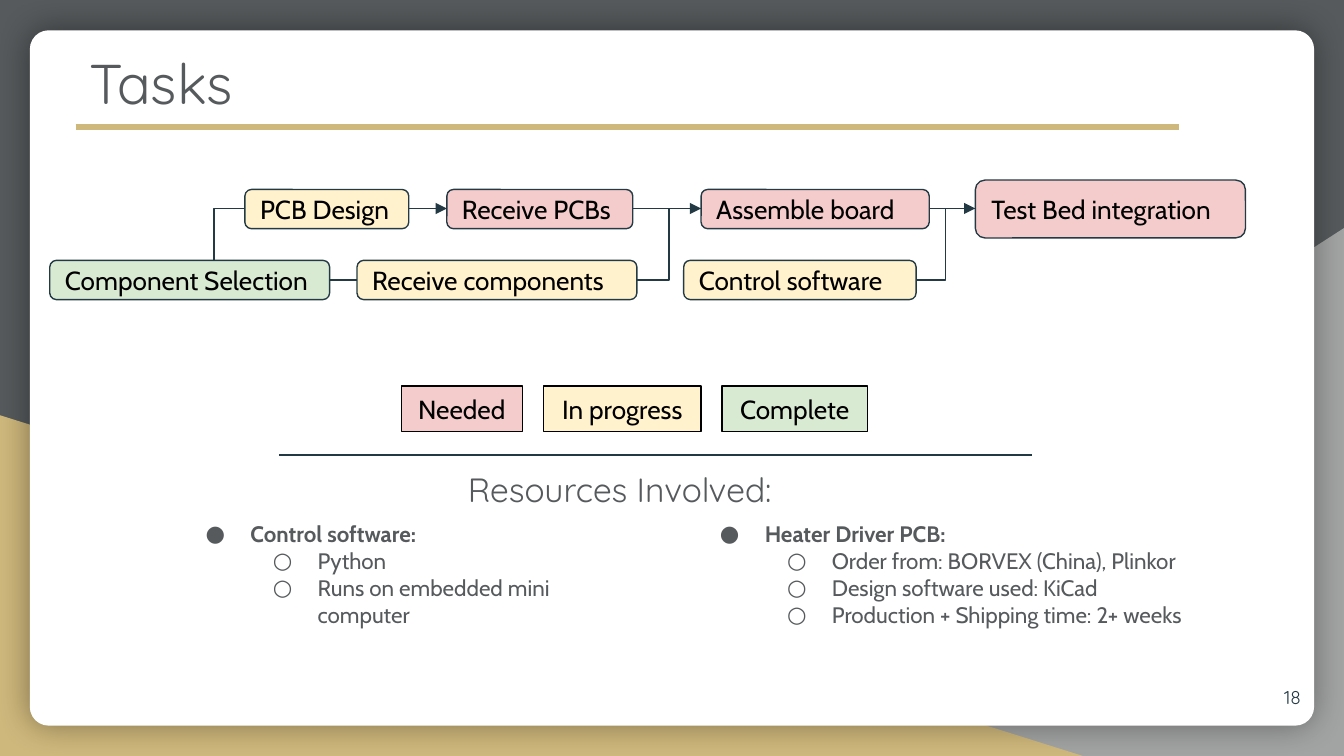
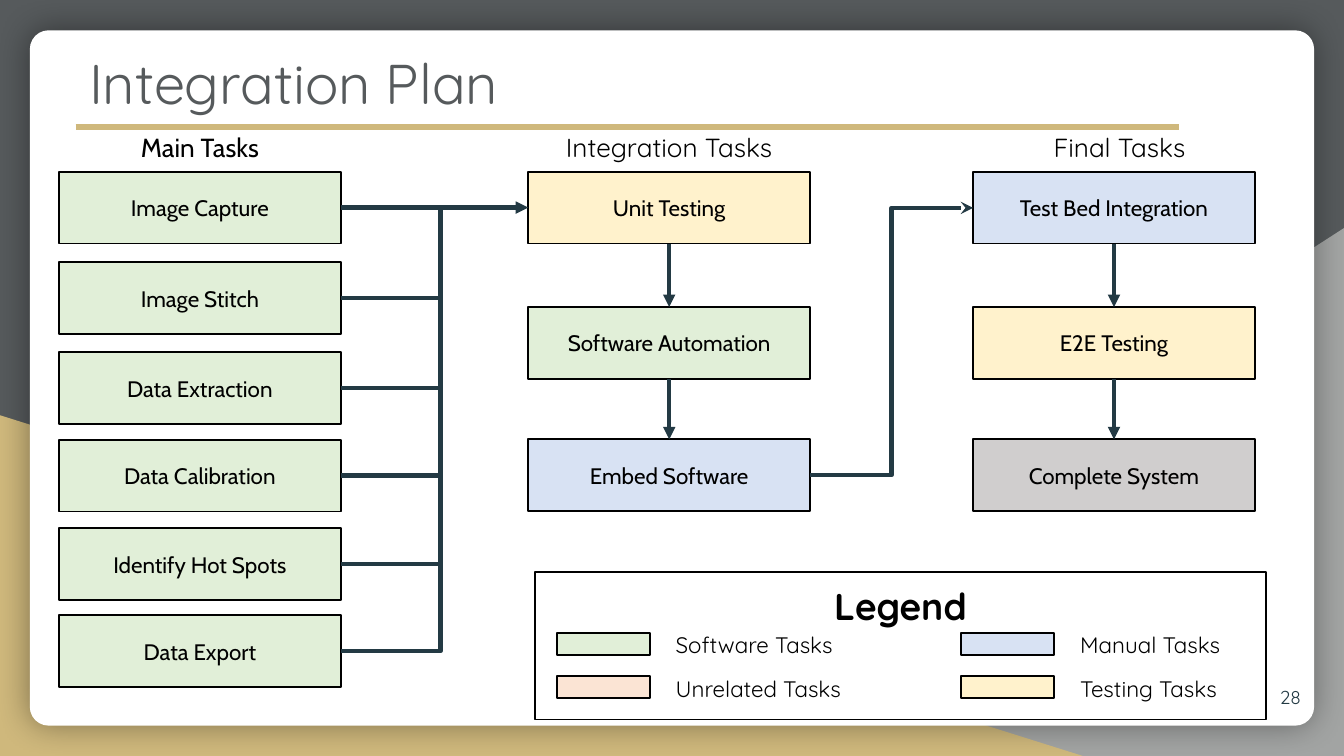
from lxml import etree
from pptx import Presentation
from pptx.dml.color import RGBColor
from pptx.enum.shapes import MSO_CONNECTOR, MSO_SHAPE
from pptx.enum.text import MSO_ANCHOR, MSO_AUTO_SIZE, PP_ALIGN
from pptx.oxml.ns import qn
from pptx.util import Pt

RECT, ROUND, TRIANGLE = MSO_SHAPE.RECTANGLE, MSO_SHAPE.ROUNDED_RECTANGLE, MSO_SHAPE.RIGHT_TRIANGLE
STRAIGHT, ELBOW = MSO_CONNECTOR.STRAIGHT, MSO_CONNECTOR.ELBOW
TOP, MIDDLE = MSO_ANCHOR.TOP, MSO_ANCHOR.MIDDLE
LEFT, CENTER, RIGHT = PP_ALIGN.LEFT, PP_ALIGN.CENTER, PP_ALIGN.RIGHT
NO_FIT = MSO_AUTO_SIZE.NONE

GRAY = RGBColor(0x56, 0x5A, 0x5C)
SILVER = RGBColor(0xA2, 0xA4, 0xA3)
GOLD = RGBColor(0xCF, 0xB8, 0x7C)
WHITE = RGBColor(0xFF, 0xFF, 0xFF)
BLACK = RGBColor(0, 0, 0)
NAVY = RGBColor(0x23, 0x3A, 0x44)
PINK = RGBColor(0xF4, 0xCC, 0xCC)
YELLOW = RGBColor(0xFF, 0xF2, 0xCC)
GREEN = RGBColor(0xD9, 0xEA, 0xD3)
SOFTWARE = RGBColor(0xE1, 0xEF, 0xD8)
MANUAL = RGBColor(0xD8, 0xE2, 0xF3)
UNRELATED = RGBColor(0xFB, 0xE4, 0xD4)
COMPLETE = RGBColor(0xD0, 0xCE, 0xCE)

CABIN, QUICKSAND = "Cabin", "Quicksand"
TITLE = {"name": QUICKSAND, "size": Pt(30), "color": GRAY}
SUBTITLE = {"name": QUICKSAND, "size": Pt(18), "color": GRAY}
NUMBER = {"name": QUICKSAND, "size": Pt(10), "color": NAVY}
BODY = {"name": CABIN, "size": Pt(12), "color": GRAY}
STEP = {"name": CABIN, "size": Pt(14), "color": BLACK}
TASK = {"name": CABIN, "size": Pt(12), "color": BLACK}
HEADING = {"name": QUICKSAND, "size": Pt(14), "color": BLACK}
LEGEND = {"name": QUICKSAND, "size": Pt(20), "color": BLACK, "bold": True}
KEY = {"name": QUICKSAND, "size": Pt(12), "color": BLACK}


def write(tf, text, fmt, align=LEFT, anchor=MIDDLE, pad=7.2):
    frame = {"word_wrap": True, "auto_size": NO_FIT, "vertical_anchor": anchor,
             "margin_left": Pt(7.2), "margin_right": Pt(7.2),
             "margin_top": Pt(pad), "margin_bottom": Pt(pad)}
    for name, value in frame.items():
        setattr(tf, name, value)
    p = tf.paragraphs[0]
    p.alignment = align
    r = p.add_run()
    r.text = text
    for name, value in fmt.items():
        if name == "color":
            r.font.color.rgb = value
        else:
            setattr(r.font, name, value)


def box(s, kind, at, fill=None, line=None, width=0.75):
    sp = s.shapes.add_shape(kind, *map(Pt, at))
    sp.shadow.inherit = False
    if fill is None:
        sp.fill.background()
    else:
        sp.fill.solid()
        sp.fill.fore_color.rgb = fill
    if line is None:
        sp.line.fill.background()
    else:
        sp.line.color.rgb = line
        sp.line.width = Pt(width)
    return sp


prs = Presentation()
prs.slide_width, prs.slide_height = Pt(720), Pt(405)
tasks = prs.slides.add_slide(prs.slide_layouts[3])
plan = prs.slides.add_slide(prs.slide_layouts[5])

master = prs.slide_master
master.background.fill.solid()
master.background.fill.fore_color.rgb = GRAY
silver = box(tasks, TRIANGLE, (282, 122.2, 438, 282.8), SILVER)
silver.element.spPr.find(qn("a:xfrm")).set("flipH", "1")
gold = box(tasks, TRIANGLE, (0, 222.5, 580, 182.5), GOLD)
panel = box(tasks, ROUND, (16, 16.25, 688, 372.5), WHITE)
panel.adjustments[0] = 0.027
effects = panel.element.spPr.find(qn("a:effectLst"))
shadow = etree.SubElement(effects, qn("a:outerShdw"), blurRad=str(Pt(18)), dist="0", algn="ctr", rotWithShape="0")
color = etree.SubElement(shadow, qn("a:srgbClr"), val=str(BLACK))
etree.SubElement(color, qn("a:alpha"), val="40000")
rule = tasks.shapes.add_connector(STRAIGHT, Pt(40.5), Pt(68), Pt(631.5), Pt(68))
rule.line.color.rgb = GOLD
rule.line.width = Pt(3)
etree.SubElement(rule.element.spPr, qn("a:effectLst"))
for i, sp in enumerate((silver, gold, panel, rule)):
    sp.element.xpath(".//p:cNvPr")[0].set("id", str(101 + i))
    master.shapes.element.insert(2 + i, sp.element)

for s, title, number in ((tasks, "Tasks", "18"), (plan, "Integration Plan", "28")):
    sp = s.shapes.title
    sp.left, sp.top, sp.width, sp.height = Pt(40.5), Pt(18.7), Pt(591), Pt(49.7)
    write(sp.text_frame, title, TITLE, anchor=TOP)
    sp = s.shapes.add_textbox(Pt(661), Pt(358), Pt(43), Pt(31))
    write(sp.text_frame, number, NUMBER, RIGHT)

for text, x, y, w, h, fill in (
    ("PCB Design", 131.2, 101.5, 87.8, 21, YELLOW),
    ("Receive PCBs", 239.4, 101.5, 99.6, 21, PINK),
    ("Assemble board", 375.6, 101.5, 122.2, 21, PINK),
    ("Test Bed integration", 522.5, 96.5, 144.7, 31, PINK),
    ("Component Selection", 26.7, 139.5, 149.9, 21, GREEN),
    ("Receive components", 191.3, 139.5, 149.9, 21, YELLOW),
    ("Control software", 366.3, 139.5, 124.5, 21, YELLOW),
):
    sp = box(tasks, ROUND, (x, y, w, h), fill, NAVY)
    write(sp.text_frame, text, STEP)

for text, x, w, fill in (
    ("Needed", 215, 64.8, PINK),
    ("In progress", 291.2, 84.4, YELLOW),
    ("Complete", 386.8, 78, GREEN),
):
    sp = box(tasks, RECT, (x, 206.8, w, 24.5), fill, BLACK)
    write(sp.text_frame, text, STEP, CENTER)

sp = tasks.shapes.add_textbox(Pt(243.5), Pt(244), Pt(179), Pt(49.7))
write(sp.text_frame, "Resources Involved:", SUBTITLE, anchor=TOP)

for idx, x, w, lines in (
    (1, 91, 239, ("Control software:", "Python", "Runs on embedded mini computer")),
    (2, 366.5, 283, ("Heater Driver PCB:", "Order from: BORVEX (China), Plinkor",
                     "Design software used: KiCad", "Production + Shipping time: 2+ weeks")),
):
    sp = tasks.placeholders[idx]
    sp.left, sp.top, sp.width, sp.height = Pt(x), Pt(271.5), Pt(w), Pt(76.5)
    tf = sp.text_frame
    write(tf, lines[0], {**BODY, "bold": True}, anchor=TOP)
    for line in lines[1:]:
        p = tf.add_paragraph()
        p.text = line
        p.level = 1
    for p in tf.paragraphs:
        p.space_before = Pt(0)
        pPr = p._p.get_or_add_pPr()
        pPr.set("marL", str(Pt(36 * (p.level + 1))))
        pPr.set("indent", str(Pt(-24)))
        color = etree.SubElement(pPr, qn("a:buClr"))
        etree.SubElement(color, qn("a:srgbClr"), val=str(GRAY))
        etree.SubElement(pPr, qn("a:buFont"), typeface=CABIN)
        etree.SubElement(pPr, qn("a:buChar"), char="○" if p.level else "●")
        for r in p.runs:
            r.font.name, r.font.size = BODY["name"], BODY["size"]
            r.font.color.rgb = BODY["color"]

ROWS = (92, 140.5, 188.7, 235.6, 283, 329.7)
COLUMNS = (31.6, 283, 521.3)
MIDS = (92, 164.5, 235.4)
W, H = 151, 38.5
MAIN = ("Image Capture", "Image Stitch", "Data Extraction",
        "Data Calibration", "Identify Hot Spots", "Data Export")
cells = [(0, y, text, SOFTWARE) for y, text in zip(ROWS, MAIN)]
cells += [
    (1, MIDS[0], "Unit Testing", YELLOW),
    (1, MIDS[1], "Software Automation", SOFTWARE),
    (1, MIDS[2], "Embed Software", MANUAL),
    (2, MIDS[0], "Test Bed Integration", MANUAL),
    (2, MIDS[1], "E2E Testing", YELLOW),
    (2, MIDS[2], "Complete System", COMPLETE),
]
for col, y, text, fill in cells:
    sp = box(plan, RECT, (COLUMNS[col], y, W, H), fill, BLACK, 1)
    write(sp.text_frame, text, TASK, CENTER, pad=3.6)

for text, x, w, fmt in (
    ("Main Tasks", 31.6, 151, STEP),
    ("Integration Tasks", 283.5, 150, HEADING),
    ("Final Tasks", 537, 125.5, HEADING),
):
    sp = plan.shapes.add_textbox(Pt(x), Pt(67), Pt(w), Pt(25))
    write(sp.text_frame, text, fmt, CENTER, TOP, 3.6)

sp = box(plan, RECT, (286.8, 306.5, 391.2, 79), None, BLACK, 1)
write(sp.text_frame, "Legend", LEGEND, CENTER, TOP, 6)
for i, (text, fill) in enumerate((
    ("Software Tasks", SOFTWARE), ("Unrelated Tasks", UNRELATED),
    ("Manual Tasks", MANUAL), ("Testing Tasks", YELLOW),
)):
    x, y = 298.2 + i // 2 * 216.7, 339 + i % 2 * 23.2
    box(plan, RECT, (x, y, 50, 11.8), fill, BLACK, 1)
    sp = plan.shapes.add_textbox(Pt(x + 56.7), Pt(y - 4.2), Pt(110), Pt(20))
    write(sp.text_frame, text, KEY, anchor=TOP, pad=3.6)

UPPER, LOWER = 111.7, 150
links = [
    (tasks, STRAIGHT, (149.5, 243.8, 552.8, 243.8), 0.75, None, None),
    (tasks, STRAIGHT, (219, UPPER, 239.4, UPPER), 0.75, "triangle", None),
    (tasks, STRAIGHT, (339, UPPER, 375.6, UPPER), 0.75, "triangle", None),
    (tasks, STRAIGHT, (497.8, UPPER, 522.5, UPPER), 0.75, "triangle", None),
    (tasks, STRAIGHT, (176.6, LOWER, 191.3, LOWER), 0.75, None, None),
    (tasks, ELBOW, (98, 139.5, 131.2, UPPER), 0.75, None, 0.5),
    (tasks, ELBOW, (341.2, LOWER, 375.6, UPPER), 0.75, None, 0.5),
    (tasks, ELBOW, (490.8, LOWER, 522.5, UPPER), 0.75, None, 0.5),
    (plan, STRAIGHT, (182.6, 111.2, COLUMNS[1], 111.2), 2.25, "triangle", None),
    (plan, ELBOW, (434, 254.6, COLUMNS[2], 111.4), 2.25, "stealth", 0.5),
]
links += [(plan, ELBOW, (182.6, y + 19.2, 236, 110), 2.25, None, 1) for y in ROWS[1:]]
for x in COLUMNS[1:]:
    for y, below in zip(MIDS, MIDS[1:]):
        links.append((plan, STRAIGHT, (x + W / 2, y + H, x + W / 2, below), 2.25, "triangle", None))

for s, kind, ends, width, head, bend in links:
    cx = s.shapes.add_connector(kind, *map(Pt, ends))
    cx.line.color.rgb = NAVY
    cx.line.width = Pt(width)
    spPr = cx.element.spPr
    if head:
        etree.SubElement(spPr.find(qn("a:ln")), qn("a:tailEnd"), type=head)
    if bend is not None:
        guides = spPr.find(qn("a:prstGeom")).get_or_add_avLst()
        etree.SubElement(guides, qn("a:gd"), name="adj1", fmla=f"val {int(bend * 100000)}")
    etree.SubElement(spPr, qn("a:effectLst"))

prs.save("out.pptx")
